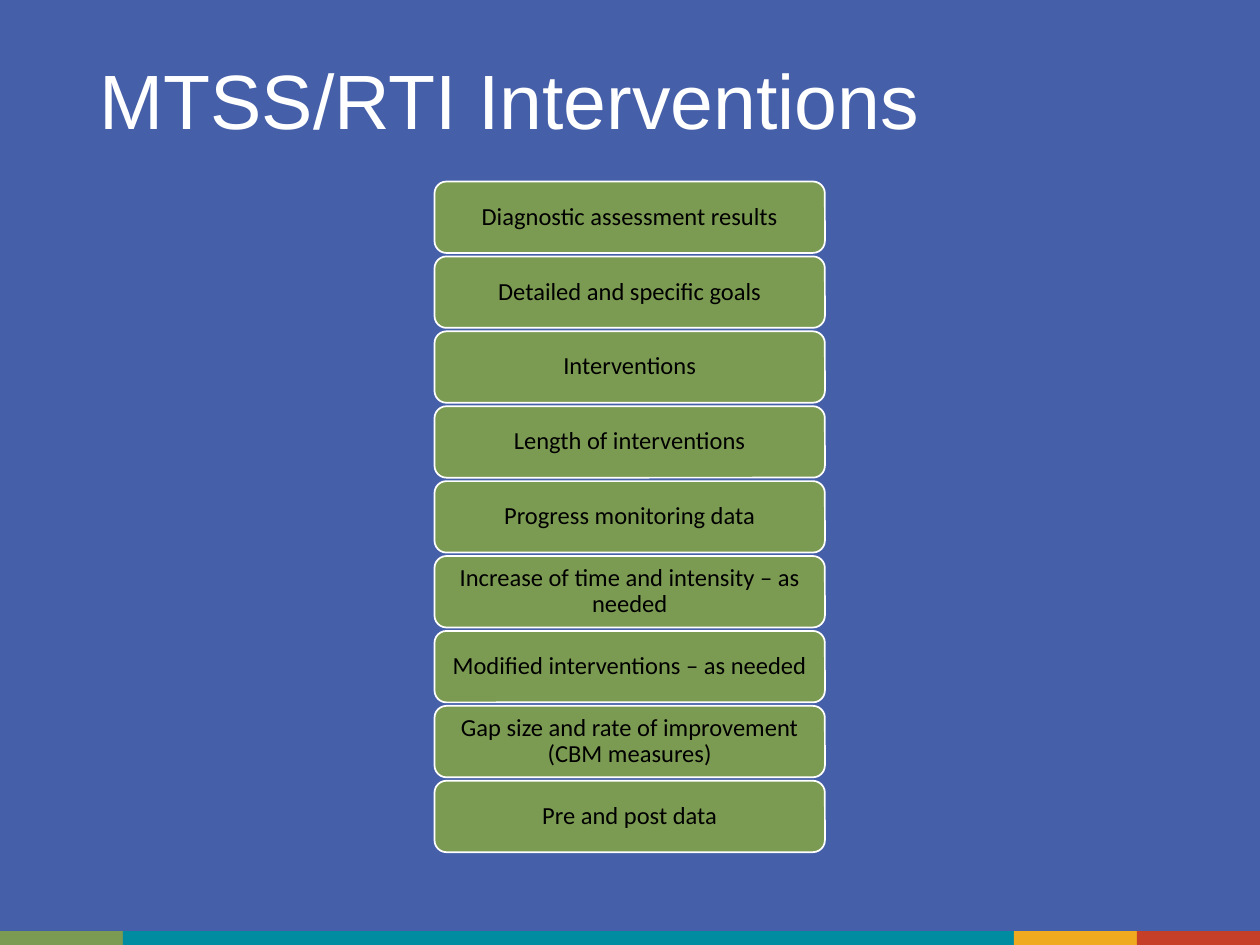
"""Build the MTSS/RTI Interventions slide with its stack of nine steps."""
from dataclasses import dataclass

from pptx import Presentation
from pptx.dml.color import RGBColor
from pptx.enum.shapes import MSO_SHAPE as Preset
from pptx.enum.text import MSO_ANCHOR as Anchor, MSO_AUTO_SIZE as AutoSize, PP_ALIGN as Align
from pptx.util import Cm, Pt


@dataclass(frozen=True)
class Theme:
    background: str = "455FA9"
    green: str = "7C9B52"
    teal: str = "008CA0"
    amber: str = "EFAA1F"
    red: str = "C63F28"
    white: str = "FFFFFF"
    black: str = "000000"
    title_font: str = "Arial"
    step_font: str = "Calibri"
    title_size: int = 44
    step_size: int = 14


def write(frame, text, *, font, size, color, align):
    frame.word_wrap = True
    frame.auto_size = AutoSize.NONE
    frame.vertical_anchor = Anchor.MIDDLE
    para = frame.paragraphs[0]
    para.alignment = align
    para.line_spacing = 0.9
    span = para.add_run()
    span.text = text
    span.font.name = font
    span.font.size = Pt(size)
    span.font.color.rgb = RGBColor.from_string(color)


def add_box(page, preset, left, top, width, height, fill):
    box = page.shapes.add_shape(preset, Cm(left), Cm(top), Cm(width), Cm(height))
    box.shadow.inherit = False
    box.fill.solid()
    box.fill.fore_color.rgb = RGBColor.from_string(fill)
    box.line.fill.background()
    return box


theme = Theme()
deck = Presentation()
deck.slide_width, deck.slide_height = Cm(25.4), Cm(19.05)
page = deck.slides.add_slide(deck.slide_layouts[5])
page.background.fill.solid()
page.background.fill.fore_color.rgb = RGBColor.from_string(theme.background)

title = page.shapes.title
title.left, title.top, title.width, title.height = Cm(1.75), Cm(1.02), Cm(21.9), Cm(2.18)
write(title.text_frame, "MTSS/RTI Interventions", font=theme.title_font,
      size=theme.title_size, color=theme.white, align=Align.LEFT)

band_left = 0
for band_width, color in [(2.48, theme.green), (17.96, theme.teal),
                          (2.48, theme.amber), (2.48, theme.red)]:
    add_box(page, Preset.RECTANGLE, band_left, 18.77, band_width, 0.28, color)
    band_left += band_width

steps = [
    "Diagnostic assessment results",
    "Detailed and specific goals",
    "Interventions",
    "Length of interventions",
    "Progress monitoring data",
    "Increase of time and intensity – as needed",
    "Modified interventions – as needed",
    "Gap size and rate of improvement (CBM measures)",
    "Pre and post data",
]
first_top, pitch = 3.66, 1.51
for index, step in enumerate(steps):
    box = add_box(page, Preset.ROUNDED_RECTANGLE, 8.76, first_top + index * pitch,
                  7.87, 1.44, theme.green)
    box.line.color.rgb = RGBColor.from_string(theme.white)
    box.line.width = Pt(1)
    frame = box.text_frame
    frame.margin_left = frame.margin_right = Cm(0.15)
    frame.margin_top = frame.margin_bottom = Cm(0.07)
    write(frame, step, font=theme.step_font, size=theme.step_size,
          color=theme.black, align=Align.CENTER)

deck.save("out.pptx")
